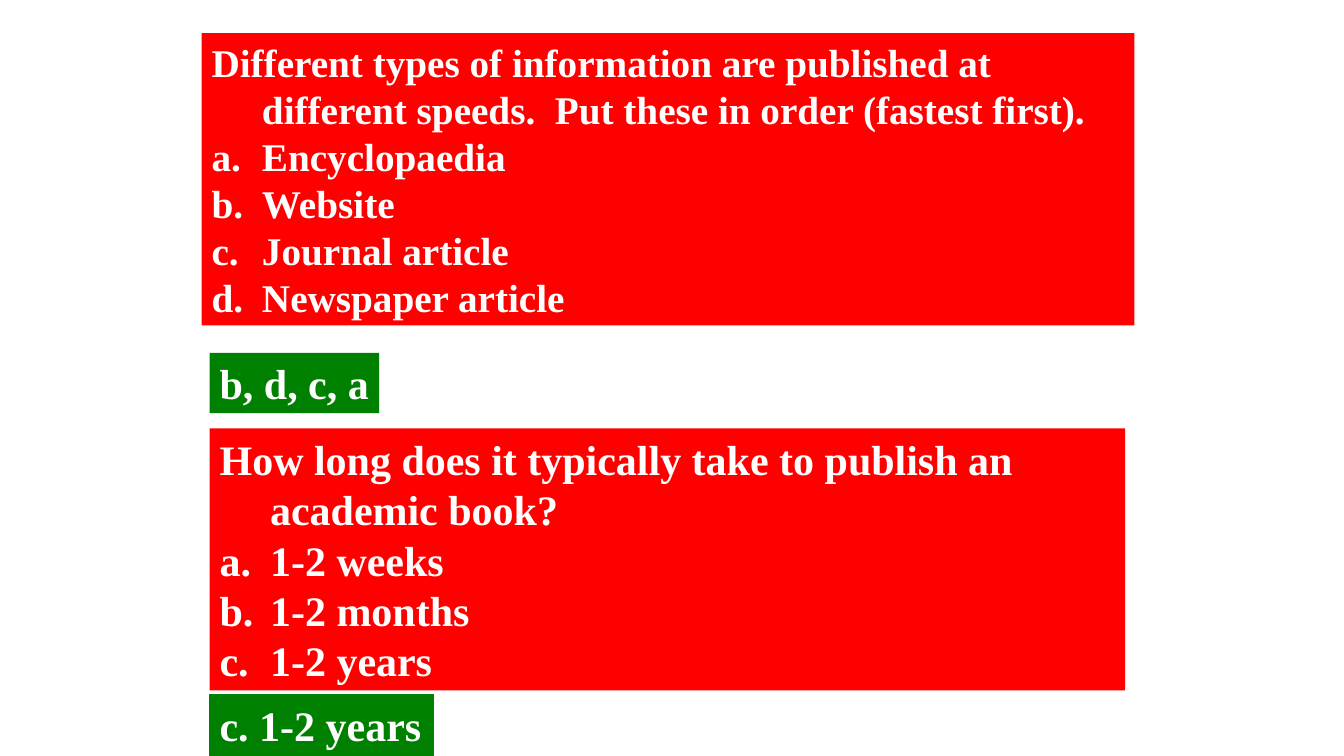
from lxml.etree import SubElement
from pptx import Presentation
from pptx.dml.color import RGBColor
from pptx.enum.text import MSO_ANCHOR as Anchor, MSO_AUTO_SIZE as Fit, PP_ALIGN as Align
from pptx.oxml.ns import qn
from pptx.util import Inches, Pt

RED = RGBColor(0xFF, 0x00, 0x00)
GREEN = RGBColor(0x00, 0x80, 0x00)
WHITE = RGBColor(0xFF, 0xFF, 0xFF)


class Quiz:
    font = "Times New Roman"
    indent = Inches(0.5)

    def __init__(self, slide):
        self.slide = slide

    def panel(self, place, fill, lines, size, wrap):
        box = self.slide.shapes.add_textbox(*map(Inches, place))
        box.fill.solid()
        box.fill.fore_color.rgb = fill
        frame = box.text_frame
        frame.text = "\n".join(lines)
        frame.word_wrap = wrap
        frame.auto_size = Fit.SHAPE_TO_FIT_TEXT
        frame.vertical_anchor = Anchor.TOP
        for para in frame.paragraphs:
            para.alignment = Align.LEFT
            font = para.runs[0].font
            font.name = self.font
            font.size = Pt(size)
            font.bold = True
            font.color.rgb = WHITE
        return box

    def question(self, place, title, choices, size):
        box = self.panel(place, RED, [title, *choices], size, True)
        for rank, para in enumerate(box.text_frame.paragraphs):
            props = para._p.get_or_add_pPr()
            props.set("marL", str(self.indent))
            props.set("indent", str(-self.indent))
            if rank:
                SubElement(props, qn("a:buFont"), typeface=self.font)
                SubElement(props, qn("a:buAutoNum"), type="alphaLcPeriod")
            else:
                SubElement(props, qn("a:buNone"))

    def answer(self, place, text):
        return self.panel(place, GREEN, [text], 30, False)


def main():
    deck = Presentation()
    deck.slide_width = Inches(13.33)
    deck.slide_height = Inches(7.5)
    quiz = Quiz(deck.slides.add_slide(deck.slide_layouts[6]))

    quiz.question(
        (2.08, 4.25, 9.08, 2.6),
        "How long does it typically take to publish an academic book?",
        ["1-2 weeks", "1-2 months", "1-2 years"], 30)
    years = quiz.answer((2.08, 6.89, 2.22, 0.61), "c. 1-2 years")
    years.line.color.rgb = GREEN
    years.line.width = Pt(0.75)
    quiz.question(
        (2, 0.33, 9.25, 2.9),
        "Different types of information are published at different speeds.  "
        "Put these in order (fastest first).",
        ["Encyclopaedia", "Website", "Journal article", "Newspaper article"], 28)
    quiz.answer((2.08, 3.5, 1.68, 0.6), "b, d, c, a")

    deck.save("out.pptx")


if __name__ == "__main__":
    main()
